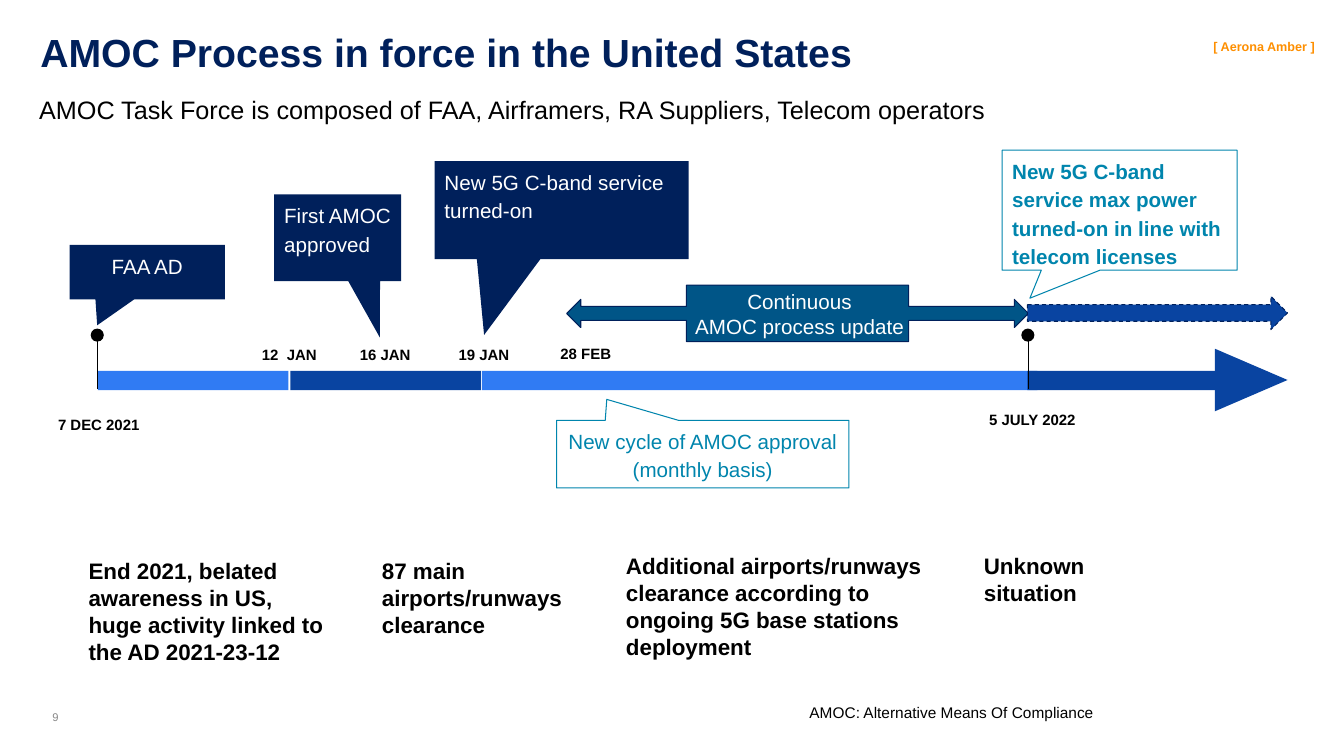
from pptx import Presentation
from pptx.dml.color import RGBColor
from pptx.enum.dml import MSO_LINE
from pptx.enum.shapes import MSO_CONNECTOR, MSO_SHAPE
from pptx.enum.text import MSO_ANCHOR, MSO_AUTO_SIZE, PP_ALIGN
from pptx.util import Inches, Pt
from lxml.etree import SubElement
from pptx.oxml.ns import qn

NAVY, BLUE, SKY, TEAL = "00205B", "0944A1", "307BF3", "0085AD"
BLACK, WHITE = "000000", "FFFFFF"
LEFT, MID, RIGHT = PP_ALIGN.LEFT, PP_ALIGN.CENTER, PP_ALIGN.RIGHT

deck = Presentation()
deck.slide_width, deck.slide_height = Inches(13.33), Inches(7.5)
slide = deck.slides.add_slide(deck.slide_layouts[5])
shapes = slide.shapes


def write(text, box=None, shape=None, size=16, color=BLACK, bold=False,
          align=LEFT, space=1.0, after=0, pad=(0.1, 0.05), anchor=MSO_ANCHOR.TOP):
    if shape is None:
        shape = shapes.add_textbox(*map(Inches, box))
    frame = shape.text_frame
    frame.text = text
    frame.word_wrap = True
    frame.auto_size = MSO_AUTO_SIZE.NONE
    frame.vertical_anchor = anchor
    frame.margin_left = frame.margin_right = Inches(pad[0])
    frame.margin_top = frame.margin_bottom = Inches(pad[1])
    for para in frame.paragraphs:
        para.alignment = align
        para.line_spacing = space
        para.space_after = Pt(after)
        font = para.font
        font.name, font.size, font.bold = "Arial", Pt(size), bold
        font.color.rgb = RGBColor.from_string(color)


def draw(kind, box, fill, line=None, adjust=()):
    shape = shapes.add_shape(kind, *map(Inches, box))
    shape.shadow.inherit = False
    shape.fill.solid()
    shape.fill.fore_color.rgb = RGBColor.from_string(fill)
    if line:
        shape.line.color.rgb = RGBColor.from_string(line)
        shape.line.width = Pt(0.75)
    else:
        shape.line.fill.background()
    for i, value in enumerate(adjust):
        shape.adjustments[i] = value
    return shape


title = shapes.title
title.left, title.top = Inches(0.4), Inches(0.23)
title.width, title.height = Inches(9.02), Inches(0.42)
write("AMOC Process in force in the United States", shape=title, size=28,
      color=NAVY, bold=True, space=1.1, pad=(0, 0))
write("AMOC Task Force is composed of FAA, Airframers, RA Suppliers, Telecom operators",
      (0.29, 0.89, 10, 0.4), size=18)
write("[ Aerona Amber ]", (11.83, 0.37, 1.21, 0.16), size=9, color="FE8F00",
      bold=True, align=RIGHT, space=1.13, pad=(0, 0))

for left, width, fill in [(0.97, 1.89, SKY), (2.88, 1.89, BLUE),
                          (4.78, 5.51, SKY), (10.19, 1.89, BLUE)]:
    draw(MSO_SHAPE.RECTANGLE, (left, 3.68, width, 0.19), fill)
tip = draw(MSO_SHAPE.ISOSCELES_TRIANGLE, (12.1, 3.41, 0.62, 0.72), BLUE)
tip.rotation = 90

for x in (0.97, 10.2):
    post = shapes.add_connector(MSO_CONNECTOR.STRAIGHT, Inches(x), Inches(3.33),
                                Inches(x), Inches(3.86))
    post.line.color.rgb = RGBColor.from_string(BLACK)
    post.line.width = Pt(0.75)
    SubElement(post._element.spPr, qn("a:effectLst"))
    draw(MSO_SHAPE.OVAL, (x - 0.07, 3.26, 0.13, 0.13), BLACK)

dates = [
    ("7 DEC 2021", (0.2, 4.02, 1.56, 0.36)),
    ("12  JAN", (1.93, 3.29, 1.88, 0.43)),
    ("16 JAN", (3.07, 3.29, 1.5, 0.43)),
    ("19 JAN", (4.08, 3.33, 1.44, 0.35)),
    ("28 FEB", (5.09, 3.32, 1.44, 0.35)),
    ("5 JULY 2022", (9.52, 3.97, 1.44, 0.36)),
]
for text, box in dates:
    write(text, box, size=10.7, bold=True, align=MID, space=1.15, after=21.3,
          pad=(0.13, 0.13), anchor=MSO_ANCHOR.MIDDLE)

draw(MSO_SHAPE.LEFT_RIGHT_ARROW_CALLOUT, (5.62, 2.83, 4.58, 0.56), "005587", NAVY,
     (0.25, 0.25, 0.25, 0.481))
write("Continuous\nAMOC process update", (6.64, 2.74, 2.58, 0.76), size=14.7,
      color=WHITE, align=MID, pad=(0.13, 0.13))
arrow = draw(MSO_SHAPE.RIGHT_ARROW, (10.19, 2.94, 2.58, 0.33), BLUE, NAVY)
arrow.line.dash_style = MSO_LINE.DASH

calls = [
    ("FAA AD", (0.69, 2.43, 1.54, 0.54), (-0.322, 0.977), NAVY, None, WHITE, False, MID),
    ("First AMOC\napproved", (2.72, 1.93, 1.26, 0.86), (0.331, 1.148),
     NAVY, None, WHITE, False, LEFT),
    ("New 5G C-band service turned-on", (4.31, 1.6, 2.52, 0.97), (-0.305, 1.277),
     NAVY, None, WHITE, False, LEFT),
    ("New 5G C-band service max power turned-on in line with telecom licenses",
     (9.94, 1.49, 2.33, 1.19), (-0.382, 0.734), WHITE, TEAL, TEAL, True, LEFT),
    ("New cycle of AMOC approval (monthly basis)", (5.52, 4.17, 2.9, 0.67),
     (-0.328, -0.81), WHITE, TEAL, TEAL, False, MID),
]
for text, box, point, fill, line, color, bold, align in calls:
    call = draw(MSO_SHAPE.RECTANGULAR_CALLOUT, box, fill, line, point)
    write(text, shape=call, size=14.7, color=color, bold=bold, align=align, space=1.15)

notes = [
    ("End 2021, belated awareness in US, huge activity linked to the AD 2021-23-12",
     (0.78, 5.48, 2.58, 1.18)),
    ("87 main airports/runways clearance", (3.69, 5.48, 2.1, 0.91)),
    ("Additional airports/runways clearance according to ongoing 5G base stations deployment",
     (6.11, 5.43, 3.22, 1.18)),
    ("Unknown situation", (9.66, 5.43, 2.1, 0.64)),
]
for text, box in notes:
    write(text, box, bold=True)

write("9", (0.52, 7.05, 0.31, 0.24), size=8, color="888888", pad=(0, 0))
write("AMOC: Alternative Means Of Compliance", (7.93, 6.93, 3.22, 0.29), size=11)

deck.save("out.pptx")
